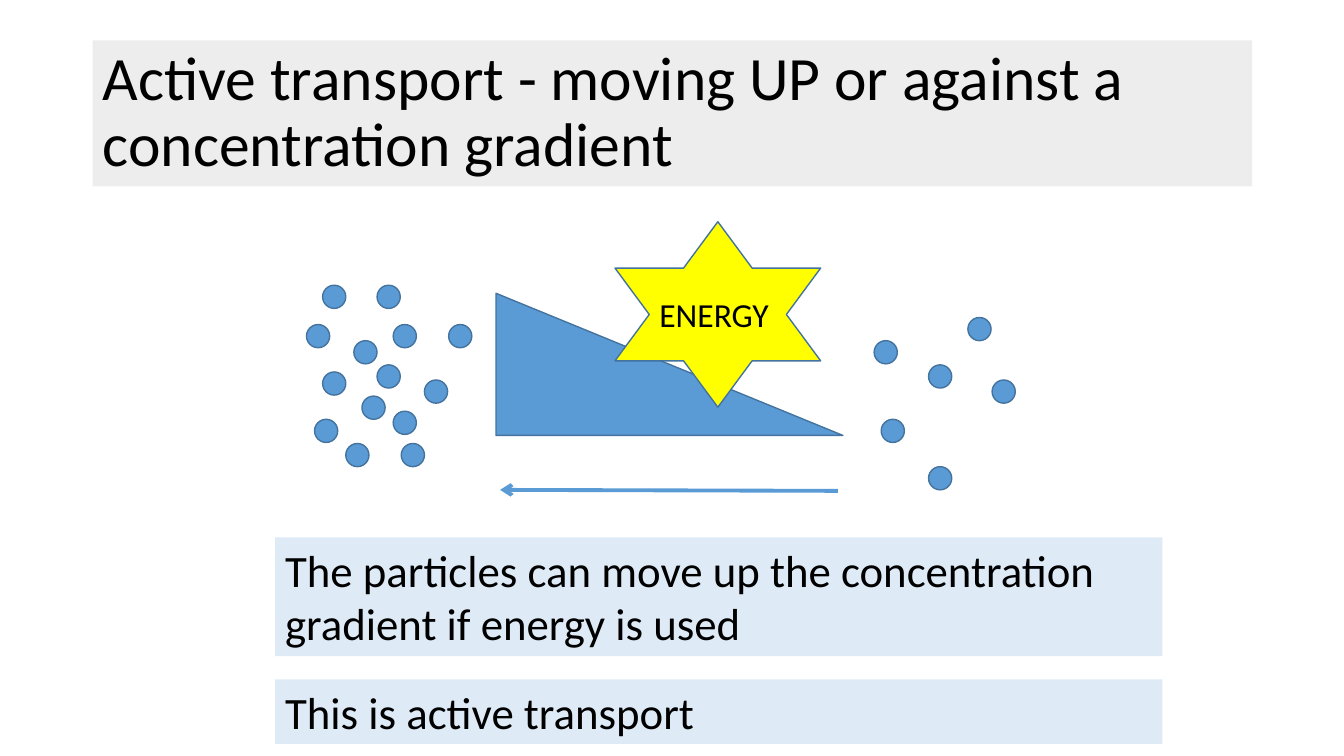
from lxml.etree import SubElement
from pptx import Presentation
from pptx.dml.color import RGBColor
from pptx.enum.shapes import MSO_CONNECTOR, MSO_SHAPE
from pptx.enum.text import MSO_ANCHOR, PP_ALIGN
from pptx.oxml.ns import qn
from pptx.util import Inches, Pt

COLORS = {
    "title_fill": "EDEDED",
    "note_fill": "DEEBF7",
    "particle": "5B9BD5",
    "outline": "43739E",
    "energy": "FFFF00",
    "text": "000000",
}
PARTICLE_SIZE = 0.23
NOTE_LEFT, NOTE_WIDTH = 2.73, 8.8

# Top-left corners of the particles on each side of the gradient
CROWDED_SIDE = [
    (3.2, 2.83), (3.74, 2.83), (3.04, 3.22), (3.51, 3.38), (3.59, 3.93),
    (3.9, 3.22), (4.45, 3.22), (3.74, 3.62), (4.21, 3.77), (3.2, 3.69),
    (3.9, 4.08), (3.98, 4.4), (3.12, 4.16), (3.43, 4.4),
]
SPARSE_SIDE = [
    (9.21, 3.62), (9.6, 3.15), (9.84, 3.77),
    (8.67, 3.38), (8.74, 4.16), (9.21, 4.63),
]


class SlideBuilder:
    font = "Calibri"

    def __init__(self, slide):
        self.s = slide

    def color(self, name):
        return RGBColor.from_string(COLORS[name])

    def shape(self, kind, x, y, w, h, fill, outlined=True):
        sp = self.s.shapes.add_shape(
            kind, Inches(x), Inches(y), Inches(w), Inches(h))
        sp.shadow.inherit = False
        sp.fill.solid()
        sp.fill.fore_color.rgb = self.color(fill)
        if outlined:
            sp.line.color.rgb = self.color("outline")
            sp.line.width = Pt(1)
        else:
            sp.line.fill.background()
        return sp

    def label(self, sp, text, size, anchor=MSO_ANCHOR.TOP,
              align=PP_ALIGN.LEFT, wrap=True, spacing=None):
        tf = sp.text_frame
        tf.text = text
        tf.word_wrap = wrap
        tf.vertical_anchor = anchor
        p = tf.paragraphs[0]
        p.alignment = align
        p.line_spacing = spacing
        r = p.runs[0]
        r.font.name = self.font
        r.font.size = Pt(size)
        r.font.color.rgb = self.color("text")

    def text_box(self, x, y, w, h, fill, text, size, **style):
        sp = self.shape(MSO_SHAPE.RECTANGLE, x, y, w, h, fill, outlined=False)
        self.label(sp, text, size, **style)

    def particles(self, corners):
        for x, y in corners:
            self.shape(MSO_SHAPE.OVAL, x, y, PARTICLE_SIZE, PARTICLE_SIZE,
                       "particle")

    def arrow(self, x1, y1, x2, y2):
        line = self.s.shapes.add_connector(
            MSO_CONNECTOR.STRAIGHT,
            Inches(x1), Inches(y1), Inches(x2), Inches(y2))
        line.line.color.rgb = self.color("particle")
        line.line.width = Pt(2.75)
        props = line._element.spPr
        SubElement(props.find(qn("a:ln")), qn("a:tailEnd"), type="arrow")
        SubElement(props, qn("a:effectLst"))


def main():
    prs = Presentation()
    prs.slide_width, prs.slide_height = Inches(13.33), Inches(7.5)
    b = SlideBuilder(prs.slides.add_slide(prs.slide_layouts[6]))

    # Title
    b.text_box(0.92, 0.4, 11.5, 1.45, "title_fill",
               "Active transport - moving UP or against a concentration gradient",
               44, anchor=MSO_ANCHOR.MIDDLE, spacing=0.9)

    # Concentration gradient
    b.shape(MSO_SHAPE.RIGHT_TRIANGLE, 4.92, 2.91, 3.44, 1.41, "particle")
    b.particles(CROWDED_SIDE + SPARSE_SIDE)

    # Energy and direction of movement
    star = b.shape(MSO_SHAPE.STAR_6_POINT, 6.1, 2.2, 2.04, 1.84, "energy")
    b.label(star, "ENERGY ", 24, anchor=MSO_ANCHOR.MIDDLE,
            align=PP_ALIGN.CENTER, wrap=False)
    b.arrow(8.31, 4.87, 4.96, 4.86)

    # Explanation
    b.text_box(NOTE_LEFT, 5.33, NOTE_WIDTH, 1.18, "note_fill",
               "The particles can move up the concentration gradient "
               "if energy is used", 32)
    b.text_box(NOTE_LEFT, 6.74, NOTE_WIDTH, 0.64, "note_fill",
               "This is active transport", 32)

    prs.save("out.pptx")


if __name__ == "__main__":
    main()
